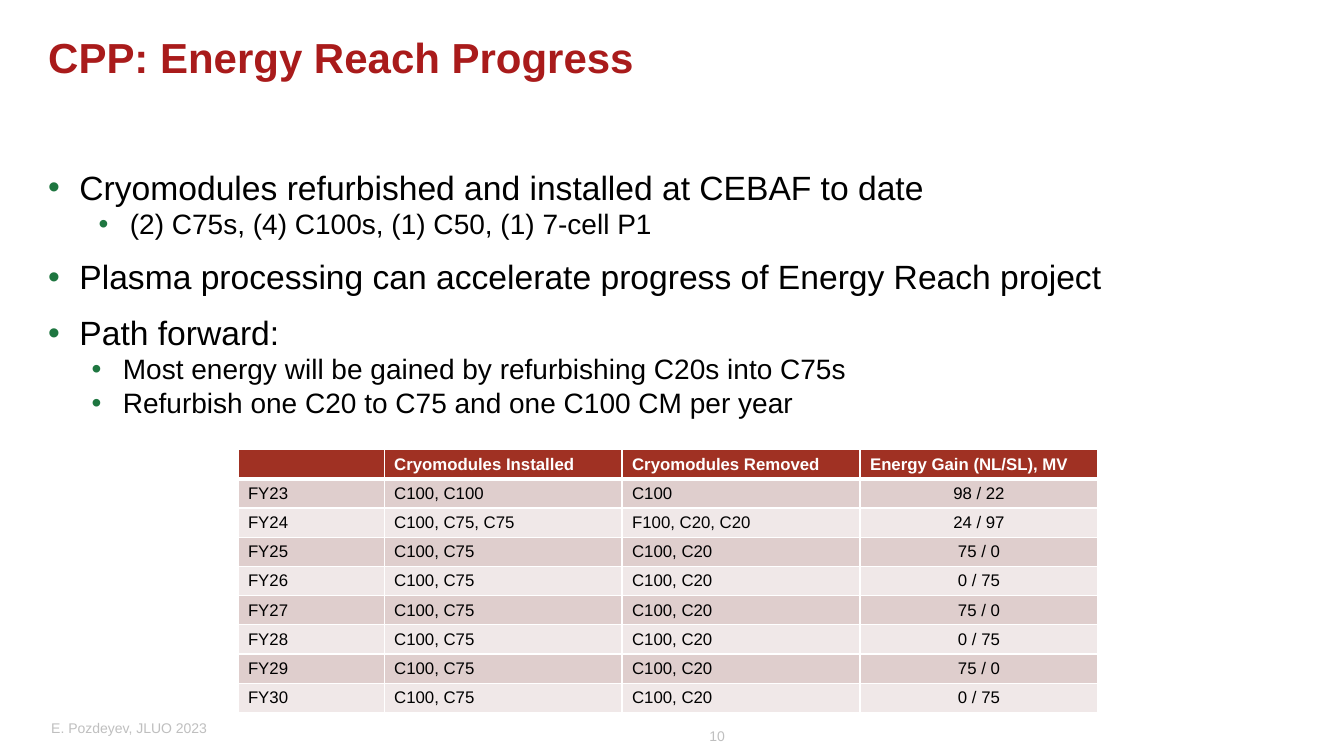
from lxml import etree
from pptx import Presentation
from pptx import util as u
from pptx.dml.color import RGBColor
from pptx.enum import text
from pptx.oxml import ns

PX = 9144  # EMU: 100 px to the inch
LEFT, CENTER, RIGHT = text.PP_ALIGN.LEFT, text.PP_ALIGN.CENTER, text.PP_ALIGN.RIGHT
TOP, MIDDLE = text.MSO_ANCHOR.TOP, text.MSO_ANCHOR.MIDDLE

BULLETS = [  # level, left indent in px, wording
    (0, 31, "Cryomodules refurbished and installed at CEBAF to date"),
    (1, 81, "(2) C75s, (4) C100s, (1) C50, (1) 7-cell P1"),
    (0, 31, "Plasma processing can accelerate progress of Energy Reach project"),
    (0, 31, "Path forward:"),
    (1, 74, "Most energy will be gained by refurbishing C20s into C75s"),
    (1, 74, "Refurbish one C20 to C75 and one C100 CM per year"),
]
HEADINGS = ["", "Cryomodules Installed", "Cryomodules Removed", "Energy Gain (NL/SL), MV"]
YEARS = [
    ["FY23", "C100, C100", "C100", "98 / 22"],
    ["FY24", "C100, C75, C75", "F100, C20, C20", "24 / 97"],
] + [
    [f"FY{year}", "C100, C75", "C100, C20", "75 / 0" if year % 2 else "0 / 75"]
    for year in range(25, 31)
]


def px(length):
    return u.Emu(length * PX)


def color(hex_code):
    return RGBColor.from_string(hex_code)


def sub(parent, tag, **attributes):
    return etree.SubElement(parent, ns.qn(tag), attributes)


def write(paragraph, wording, size=12, ink="000000", bold=False, align=LEFT, spacing=None):
    """Fill a paragraph; an empty one still takes the size, which sets its line height."""
    paragraph.alignment = align
    if spacing:
        paragraph.line_spacing = spacing
    if not wording:
        sub(paragraph._p, "a:endParaRPr", sz=str(size * 100))
        return
    run = paragraph.add_run()
    run.text = wording
    run.font.name = "Arial"
    run.font.size = u.Pt(size)
    run.font.bold = bold
    run.font.color.rgb = color(ink)


def add_bullet(paragraph, indent, hang, ink):
    properties = paragraph._p.get_or_add_pPr()
    properties.set("marL", str(px(indent)))
    properties.set("indent", str(px(-hang)))
    sub(sub(properties, "a:buClr"), "a:srgbClr", val=ink)
    sub(properties, "a:buFont", typeface="Arial")
    sub(properties, "a:buChar", char="•")


def add_borders(cell, ink, top, bottom):
    """Draw the four cell edges; they must stand before the fill in the XML."""
    properties = cell._tc.get_or_add_tcPr()
    edges = [("a:lnL", 1), ("a:lnR", 1), ("a:lnT", top), ("a:lnB", bottom)]
    for place, (tag, points) in enumerate(edges):
        edge = sub(properties, tag, w=str(u.Pt(points)))
        sub(sub(edge, "a:solidFill"), "a:srgbClr", val=ink)
        properties.insert(place, edge)


class Deck:
    red, green, grey, white = "A91B1B", "1E7640", "BFBFBF", "FFFFFF"
    header_fill, band_fills = "A03123", ("DFCECD", "F0E8E8")

    def __init__(self):
        self.presentation = Presentation()
        self.presentation.slide_width = px(1333)
        self.presentation.slide_height = px(750)
        self.slide = self.presentation.slides.add_slide(self.presentation.slide_layouts[6])

    def frame(self, left, top, width, height, anchor=TOP, inset=True):
        frame = self.slide.shapes.add_textbox(*map(px, (left, top, width, height))).text_frame
        frame.word_wrap = True
        frame.vertical_anchor = anchor
        if not inset:
            frame.margin_left = frame.margin_right = 0
            frame.margin_top = frame.margin_bottom = 0
        return frame

    def label(self, box, wording, anchor=TOP, inset=True, **style):
        write(self.frame(*box, anchor, inset).paragraphs[0], wording, **style)

    def bullets(self, box, items):
        frame = self.frame(*box)
        for position, (level, indent, wording) in enumerate(items):
            paragraph = frame.add_paragraph() if position else frame.paragraphs[0]
            paragraph.level = level
            if position:
                paragraph.space_before = u.Pt(2.2 if level else 14)
            add_bullet(paragraph, indent, 31, self.green)
            write(paragraph, wording, size=20 if level else 24, spacing=0.9)

    def table(self, left, top, widths, row_height, rows):
        table = self.slide.shapes.add_table(
            len(rows), len(widths), px(left), px(top), px(sum(widths)), px(row_height * len(rows))
        ).table
        for column, width in zip(table.columns, widths):
            column.width = px(width)
        for r, row in enumerate(rows):
            table.rows[r].height = px(row_height)
            for c, wording in enumerate(row):
                cell = table.cell(r, c)
                cell.margin_top = cell.margin_bottom = px(3)
                cell.vertical_anchor = MIDDLE
                cell.fill.solid()
                cell.fill.fore_color.rgb = color(self.band_fills[(r - 1) % 2] if r else self.header_fill)
                add_borders(cell, self.white, top=3 if r == 1 else 1, bottom=1 if r else 3)
                write(
                    cell.text_frame.paragraphs[0], wording,
                    ink="000000" if r else self.white, bold=r == 0,
                    align=CENTER if r and c == len(widths) - 1 else LEFT,
                )


def main():
    deck = Deck()
    deck.label((688, 724, 31, 17), "10", inset=False, size=10, ink=deck.grey, align=RIGHT, spacing=0.9)
    deck.label((41, 712, 422, 20), "E. Pozdeyev, JLUO 2023", anchor=MIDDLE, size=10, ink=deck.grey)
    deck.label((38, 34, 1249, 53), "CPP: Energy Reach Progress", size=30, ink=deck.red, bold=True, spacing=0.85)
    deck.bullets((38, 165, 1243, 443), BULLETS)
    deck.table(236, 446, [145, 236, 236, 236], 29, [HEADINGS] + YEARS)
    deck.presentation.save("out.pptx")


if __name__ == "__main__":
    main()
